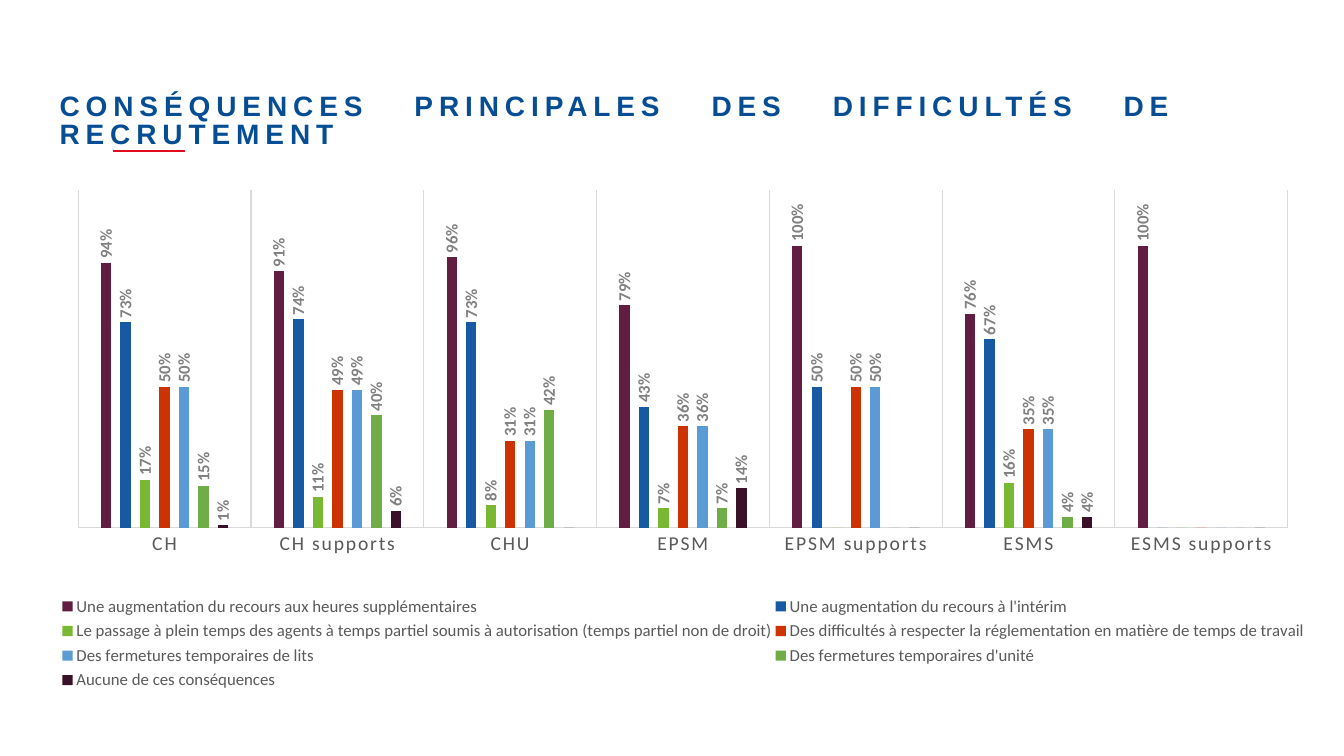
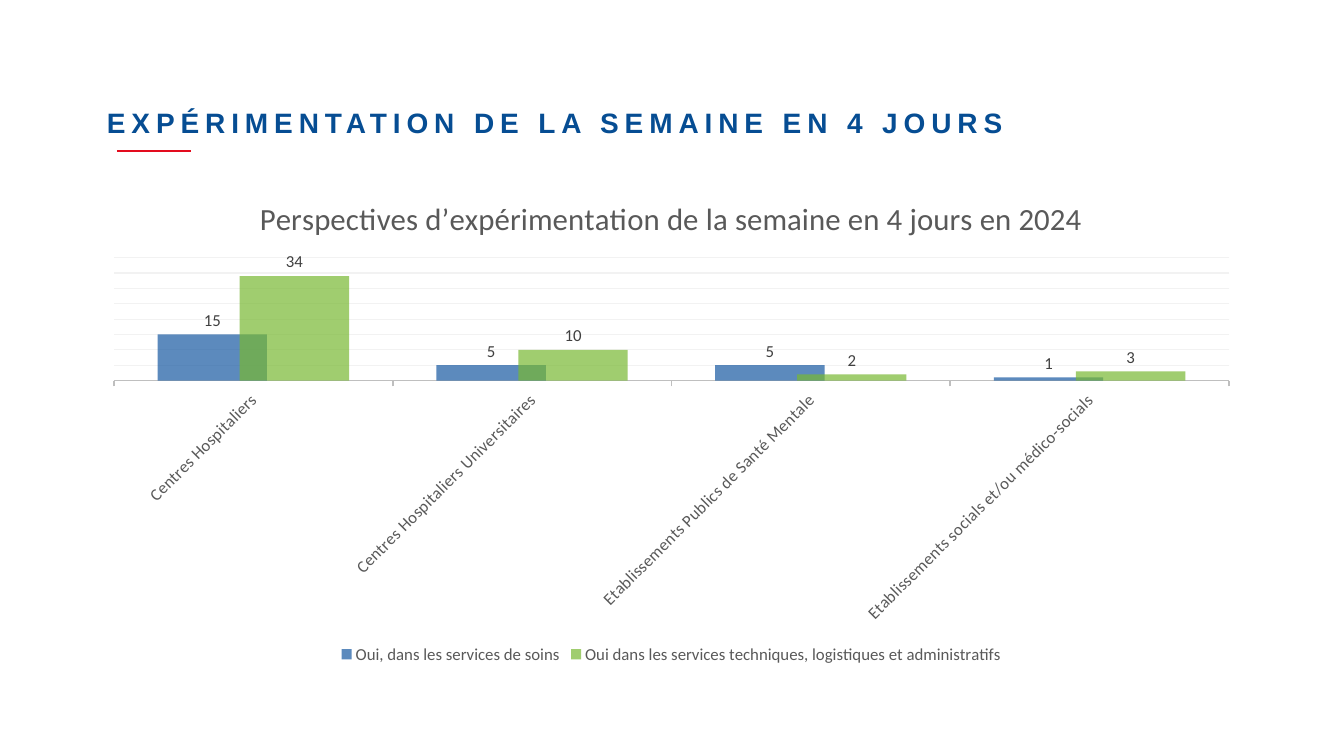
import pptx
import pptx.util
import pptx.chart.data
import pptx.dml.color
import pptx.enum.chart
import pptx.enum.shapes
import pptx.enum.text
import pptx.oxml
import pptx.oxml.ns
import lxml.etree

COLORS = {
    "title": "064D93", "rule": "E30C1E", "text": "595959", "label": "808080",
    "dark": "404040", "grid": "D9D9D9", "axis": "BFBFBF", "pale": "F2F2F2",
    "plum": "611D42", "blue": "1759A2", "lime": "78B832", "rust": "CC3300",
    "sky": "5B9BD5", "green": "70AD47", "wine": "3A1128",
}
qn = pptx.oxml.ns.qn
Pt = pptx.util.Pt
ENUM = pptx.enum.chart


def px(n):
    """100 px make one inch."""
    return pptx.util.Emu(n * 9144)


def rgb(key):
    return pptx.dml.color.RGBColor.from_string(COLORS[key])


def add_sub(node, tag, **attrs):
    return lxml.etree.SubElement(node, qn(tag), attrs)


class Deck:
    def __init__(self):
        self.prs = pptx.Presentation()
        self.prs.slide_width, self.prs.slide_height = px(1333), px(750)
        self.slide = None

    def start(self, text, x, y, w):
        """New slide with its title."""
        self.slide = self.prs.slides.add_slide(self.prs.slide_layouts[5])
        title = self.slide.shapes.title
        title.left, title.top, title.width, title.height = px(x), px(y), px(w), px(28)
        frame = title.text_frame
        frame.text = text
        frame.word_wrap = True
        frame.auto_size = pptx.enum.text.MSO_AUTO_SIZE.SHAPE_TO_FIT_TEXT
        frame.vertical_anchor = pptx.enum.text.MSO_ANCHOR.TOP
        frame.margin_left = frame.margin_right = frame.margin_top = frame.margin_bottom = 0
        para = frame.paragraphs[0]
        para.alignment = pptx.enum.text.PP_ALIGN.JUSTIFY
        para.line_spacing = Pt(19.6)
        self.style(para.runs[0].font, 20, "title", True, "Arial", 420)

    def style(self, font, size, color, bold=False, name="Calibri", space=0):
        font.size, font.bold, font.name = Pt(size), bold, name
        font.color.rgb = rgb(color)
        if space:
            font._element.set("spc", str(space))

    def stroke(self, line, color, width):
        line.color.rgb = rgb(color)
        line.width = Pt(width)

    def rule(self, x, y, w):
        """Short red line under the title."""
        line = self.slide.shapes.add_connector(
            pptx.enum.shapes.MSO_CONNECTOR.STRAIGHT, px(x), px(y), px(x + w), px(y))
        self.stroke(line.line, "rule", 1.5)
        add_sub(line._element.spPr, "a:effectLst")

    def chart(self, box, cats, rows, gap, lap, top, step):
        """Column chart with a bottom legend and a hidden value axis."""
        data = pptx.chart.data.CategoryChartData()
        data.categories = cats
        for name, _, vals in rows:
            data.add_series(name, vals)
        chart = self.slide.shapes.add_chart(
            ENUM.XL_CHART_TYPE.COLUMN_CLUSTERED, *map(px, box), data).chart
        self.style(chart.font, 10, "dark")
        chart.has_title = False
        chart.has_legend = True
        chart.legend.position = ENUM.XL_LEGEND_POSITION.BOTTOM
        chart.legend.include_in_layout = False
        self.style(chart.legend.font, 12, "text")
        plot = chart.plots[0]
        plot.gap_width, plot.overlap, plot.vary_by_categories = gap, lap, False
        for part, (_, color, _) in zip(plot.series, rows):
            part.format.fill.solid()
            part.format.fill.fore_color.rgb = rgb(color)
            part.invert_if_negative = False
        axis = chart.value_axis
        axis.visible = axis.has_major_gridlines = False
        axis.minimum_scale, axis.maximum_scale, axis.major_unit = 0, top, step
        return chart

    def cat_axis(self, chart, size, space, color, width, tick):
        axis = chart.category_axis
        self.style(axis.tick_labels.font, size, "text", space=space)
        self.stroke(axis.format.line, color, width)
        axis.major_tick_mark = tick
        return axis

    def labels(self, chart, color, bold, fmt):
        """Values above the columns; returns the text body of each series."""
        for part in chart.plots[0].series:
            tags = part.data_labels
            tags.show_value = True
            tags.position = ENUM.XL_LABEL_POSITION.OUTSIDE_END
            tags.number_format, tags.number_format_is_linked = fmt, False
            self.style(tags.font, 12, color, bold)
            yield tags._element.find(qn("c:txPr"))

    def turn(self, body, angle):
        node = body.find(qn("a:bodyPr"))
        node.set("rot", str(angle * 60000))
        node.set("vert", "horz")

    def place(self, node, index, box, inner=False):
        """Fixed place of a chart part, as shares of the chart."""
        for old in node.findall(qn("c:layout")):
            node.remove(old)
        lay = lxml.etree.Element(qn("c:layout"))
        node.insert(index, lay)
        man = add_sub(lay, "c:manualLayout")
        if inner:
            add_sub(man, "c:layoutTarget", val="inner")
        for tag in ("xMode", "yMode"):
            add_sub(man, "c:" + tag, val="edge")
        for tag, val in zip("xywh", box):
            add_sub(man, "c:" + tag, val=str(val))

    def fade(self, chart, share):
        for part in chart.plots[0].series:
            fill = part._element.find(qn("c:spPr")).find(".//" + qn("a:srgbClr"))
            add_sub(fill, "a:alpha", val=str(share * 1000))

    def head(self, chart, text):
        chart.has_title = True
        frame = chart.chart_title.text_frame
        frame.text = text
        self.style(frame.paragraphs[0].runs[0].font, 22, "text", space=20)
        chart.chart_title.include_in_layout = False


def effects(deck):
    """Effects of the hiring troubles."""
    deck.start("CONSÉQUENCES PRINCIPALES DES DIFFICULTÉS DE RECRUTEMENT", 59, 94, 1106)
    deck.rule(112, 150, 72)
    cats = ["CH", "CH supports", "CHU", "EPSM", "EPSM supports", "ESMS", "ESMS supports"]
    rows = [
        ("Une augmentation du recours aux heures supplémentaires", "plum",
         (0.94, 0.91, 0.96, 0.79, 1, 0.76, 1)),
        ("Une augmentation du recours à l'intérim", "blue",
         (0.73, 0.74, 0.73, 0.43, 0.5, 0.67, 0)),
        ("Le passage à plein temps des agents à temps partiel soumis à autorisation "
         "(temps partiel non de droit)", "lime",
         (0.17, 0.11, 0.08, 0.07, 0, 0.16, 0)),
        ("Des difficultés à respecter la réglementation en matière de temps de travail",
         "rust", (0.5, 0.49, 0.31, 0.36, 0.5, 0.35, 0)),
        ("Des fermetures temporaires de lits", "sky",
         (0.5, 0.49, 0.31, 0.36, 0.5, 0.35, 0)),
        ("Des fermetures temporaires d'unité", "green",
         (0.15, 0.4, 0.42, 0.07, 0, 0.04, 0)),
        ("Aucune de ces conséquences", "wine",
         (0.01, 0.06, 0, 0.14, 0, 0.04, 0)),
    ]
    chart = deck.chart((59, 163, 1238, 537), cats, rows, 444, -90, 1.2, 0.2)
    area = chart._chartSpace.find(".//" + qn("c:plotArea"))
    deck.place(area, 0, (0.015, 0.047, 0.969, 0.625), True)
    # The legend spans the chart in two columns
    deck.place(chart.legend._element, 1, (0, 0.79, 1, 0.19))
    axis = deck.cat_axis(chart, 14, 120, "grid", 0.75, ENUM.XL_TICK_MARK.NONE)
    axis.has_major_gridlines = True
    deck.stroke(axis.major_gridlines.format.line, "grid", 0.75)
    # Zero values show no label
    for body in deck.labels(chart, "label", True, "0%;;"):
        deck.turn(body, -90)


def trial(deck):
    """Plans for the four-day week."""
    deck.start("EXPÉRIMENTATION DE LA SEMAINE EN 4 JOURS", 106, 111, 1191)
    deck.rule(116, 150, 73)
    cats = ["Centres Hospitaliers", "Centres Hospitaliers Universitaires",
            "Etablissements Publics de Santé Mentale",
            "Etablissements socials et/ou médico-socials"]
    rows = [
        ("Oui, dans les services de soins", "blue", (15, 5, 5, 1)),
        ("Oui dans les services techniques, logistiques et administratifs", "lime",
         (34, 10, 2, 3)),
    ]
    chart = deck.chart((90, 175, 1152, 488), cats, rows, 80, 25, 40, 5)
    deck.head(chart, "Perspectives d’expérimentation de la semaine en 4 jours en 2024")
    deck.fade(chart, 70)
    axis = deck.cat_axis(chart, 12, 20, "axis", 1.25, ENUM.XL_TICK_MARK.OUTSIDE)
    deck.turn(axis._element.find(qn("c:txPr")), -45)
    chart.value_axis.has_major_gridlines = True
    deck.stroke(chart.value_axis.major_gridlines.format.line, "pale", 0.75)
    for body in deck.labels(chart, "dark", False, "0"):
        deck.turn(body, 0)


def main():
    deck = Deck()
    effects(deck)
    trial(deck)
    deck.prs.save("out.pptx")


if __name__ == "__main__":
    main()
